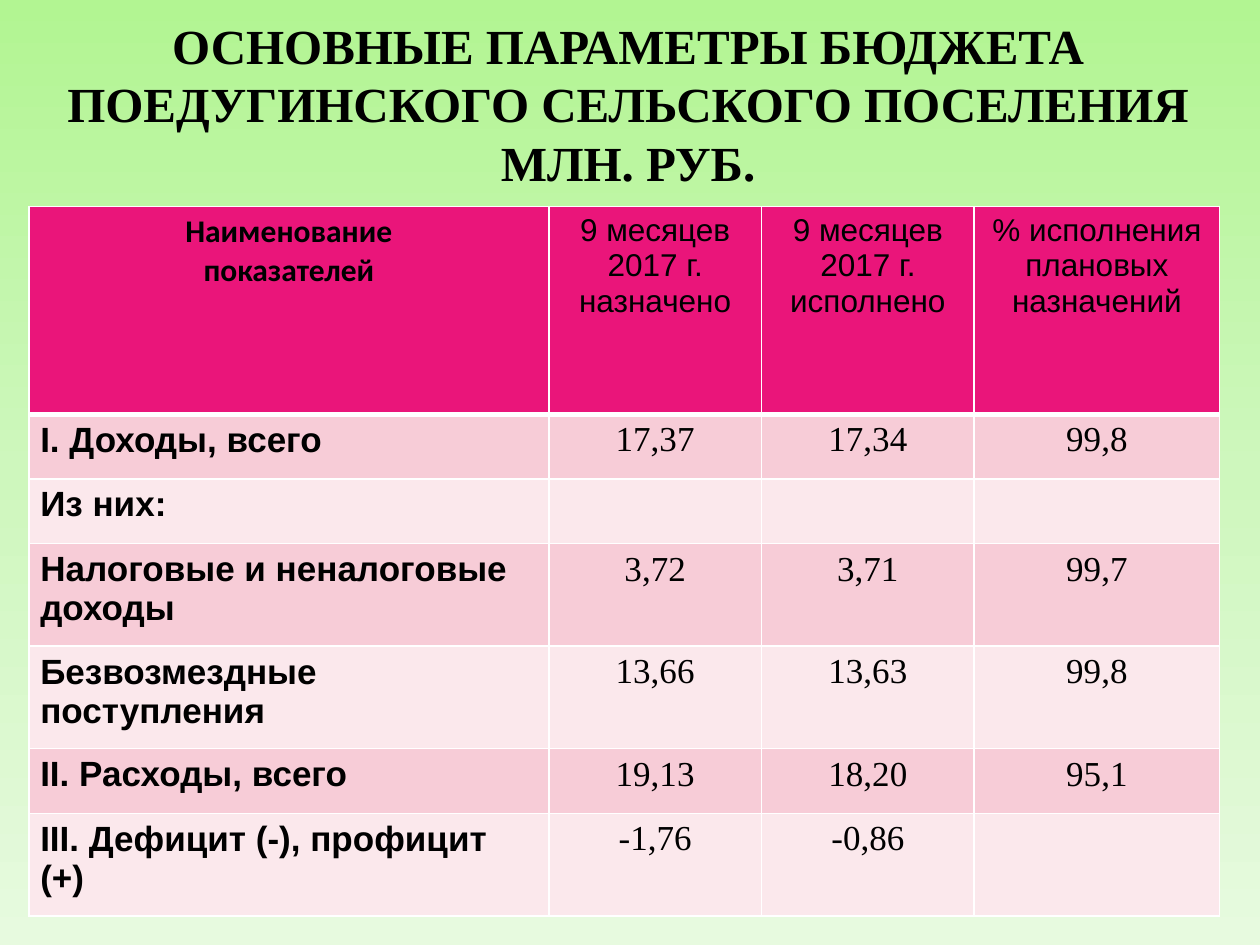
import copy
import pptx
import pptx.dml.color
import pptx.enum.text
import pptx.oxml
import pptx.oxml.ns
import pptx.util

Inches = pptx.util.Inches
Align = pptx.enum.text.PP_ALIGN
Anchor = pptx.enum.text.MSO_ANCHOR

TITLE = "ОСНОВНЫЕ ПАРАМЕТРЫ БЮДЖЕТА ПОЕДУГИНСКОГО СЕЛЬСКОГО ПОСЕЛЕНИЯ МЛН. РУБ."
HEADS = [
    "Наименование\nпоказателей",
    "9 месяцев 2017 г. назначено",
    "9 месяцев 2017 г. исполнено",
    "% исполнения\nплановых назначений",
]
ROWS = [
    ["I. Доходы, всего", "17,37", "17,34", "99,8"],
    ["Из них:", "", "", ""],
    ["Налоговые и неналоговые доходы", "3,72", "3,71", "99,7"],
    ["Безвозмездные поступления", "13,66", "13,63", "99,8"],
    ["II. Расходы, всего", "19,13", "18,20", "95,1"],
    ["III. Дефицит (-), профицит (+)", "-1,76", "-0,86", ""],
]
WIDTHS = [4.13, 1.69, 1.69, 1.95]
HEIGHTS = [1.64, 0.51, 0.51, 0.81, 0.81, 0.51, 0.81]
BANDS = ["F7CCD7", "FBE8EC"]


def color(code):
    """Turn a hex string into a colour."""
    return pptx.dml.color.RGBColor.from_string(code)


def write(frame, text, font="Arial", size=18, bold=False, align=Align.CENTER):
    """Fill a text frame, one paragraph for each line of text."""
    frame.word_wrap = True
    frame.text = text
    for para in frame.paragraphs:
        para.alignment = align
        for run in para.runs:
            run.font.name = font
            run.font.size = pptx.util.Pt(size)
            run.font.bold = bold
            run.font.color.rgb = color("000000")


def border(cell, base=1):
    """Draw white lines round a cell, with the given width at its base."""
    props = cell._tc.get_or_add_tcPr()
    sides = [("lnL", 1), ("lnR", 1), ("lnT", 1), ("lnB", base)]
    for spot, (side, width) in enumerate(sides):
        props.insert(spot, pptx.oxml.parse_xml(
            f'<a:{side} {pptx.oxml.ns.nsdecls("a")} w="{pptx.util.Pt(width)}">'
            '<a:solidFill><a:srgbClr val="FFFFFF"/></a:solidFill>'
            f'</a:{side}>'))


def paint(slide, codes):
    """Give the slide a gradient from top to bottom with even stops."""
    fill = slide.background.fill
    fill.gradient()
    fill.gradient_angle = 270
    stops = slide.element.xpath(".//a:gsLst")[0]
    stops.insert(1, copy.deepcopy(stops[0]))
    for place, (stop, code) in enumerate(zip(fill.gradient_stops, codes)):
        stop.color.rgb = color(code)
        stop.position = place / (len(codes) - 1)


def add_title(slide, left, top, width, height):
    """Place the title in its box."""
    title = slide.shapes.title
    title.left, title.top = left, top
    title.width, title.height = width, height
    frame = title.text_frame
    write(frame, TITLE, font="Times New Roman", size=28, bold=True)
    frame.auto_size = pptx.enum.text.MSO_AUTO_SIZE.NONE
    frame.vertical_anchor = Anchor.MIDDLE


def add_budget(slide, left, top, width, height):
    """Place the budget table in its box."""
    table = slide.shapes.add_table(
        len(HEIGHTS), len(WIDTHS), left, top, width, height).table
    for col, share in zip(table.columns, WIDTHS):
        col.width = int(width * share / sum(WIDTHS))
    for row, share in zip(table.rows, HEIGHTS):
        row.height = int(height * share / sum(HEIGHTS))
    for r, texts in enumerate([HEADS] + ROWS):
        for c, text in enumerate(texts):
            cell = table.cell(r, c)
            if r == 0:
                look = dict(font="Arial" if c else "Calibri", bold=c == 0)
            elif c == 0:
                look = dict(size=20, bold=True, align=Align.LEFT)
            else:
                look = dict(font="Times New Roman", size=20)
            write(cell.text_frame, text, **look)
            cell.margin_left = cell.margin_right = Inches(0.09)
            cell.margin_top = cell.margin_bottom = Inches(0.05)
            cell.fill.solid()
            cell.fill.fore_color.rgb = color(BANDS[(r - 1) % 2] if r else "EA157A")
            border(cell, base=1 if r else 3)


def main():
    """Build and save the slide."""
    deck = pptx.Presentation()
    deck.slide_width, deck.slide_height = Inches(10), Inches(7.5)
    slide = deck.slides.add_slide(deck.slide_layouts[5])
    paint(slide, ["B2F592", "CEF7BD", "E7FADF"])
    add_title(slide, Inches(0.23), Inches(0.31), Inches(9.51), Inches(1.02))
    add_budget(slide, Inches(0.23), Inches(1.64), Inches(9.45), Inches(5.63))
    deck.save("out.pptx")


if __name__ == "__main__":
    main()
